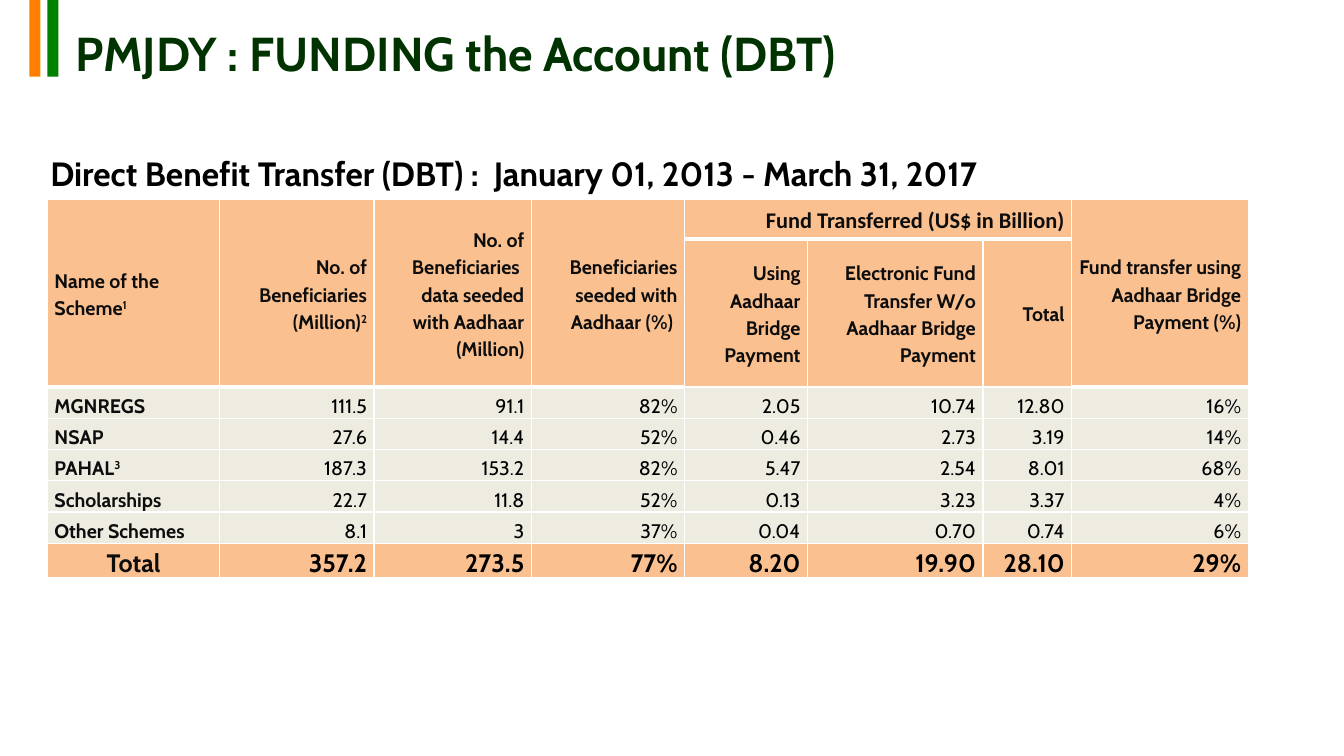
from lxml.etree import SubElement
from pptx import Presentation
from pptx.dml.color import RGBColor
from pptx.enum.shapes import MSO_SHAPE
from pptx.enum.text import MSO_ANCHOR, PP_ALIGN
from pptx.oxml.ns import qn
from pptx.util import Inches, Pt

FONT = "Cabin"
PEACH, CREAM, INK, BLACK = "FAC090", "EEECE1", "0D0D0D", "000000"
WIDTHS = [1.71, 1.53, 1.56, 1.52, 1.22, 1.74, 0.88, 1.75]
HEIGHTS = [0.39, 1.47] + [0.31] * 6

# "^" marks a raised digit, a line break starts a new paragraph
HEADS = {
    (0, 0): "Name of the Scheme^1",
    (0, 1): "No. of Beneficiaries\n(Million)^2",
    (0, 2): "No. of Beneficiaries  data seeded with Aadhaar\n(Million)",
    (0, 3): "Beneficiaries seeded with Aadhaar (%) ",
    (0, 4): "Fund Transferred (US$ in Billion)",
    (0, 7): "Fund transfer using Aadhaar Bridge Payment (%)",
    (1, 4): "Using Aadhaar Bridge Payment",
    (1, 5): "Electronic Fund Transfer W/o Aadhaar Bridge Payment",
    (1, 6): "Total",
}
SCHEMES = [
    ["MGNREGS", "111.5", "91.1", "82%", "2.05", "10.74", "12.80", "16%"],
    ["NSAP", "27.6", "14.4", "52%", "0.46", "2.73", "3.19", "14%"],
    ["PAHAL^3", "187.3", "153.2", "82%", "5.47", "2.54", "8.01", "68%"],
    ["Scholarships", "22.7", "11.8", "52%", "0.13", "3.23", "3.37", "4%"],
    ["Other Schemes", "8.1", "3", "37%", "0.04", "0.70", "0.74", "6%"],
]
TOTALS = ["Total", "357.2", "273.5", "77%", "8.20", "19.90", "28.10", "29%"]


def color(code):
    return RGBColor.from_string(code)


def write(frame, text, size, ink, bold=True, font=FONT,
          align=PP_ALIGN.LEFT, lead=1.15):
    for num, line in enumerate(text.split("\n")):
        para = frame.add_paragraph() if num else frame.paragraphs[0]
        para.alignment = align
        para.line_spacing = lead
        for part, words in enumerate(line.split("^")):
            run = para.add_run()
            run.text = words
            run.font.name = font
            run.font.size = Pt(size)
            run.font.bold = bold
            run.font.color.rgb = color(ink)
            if part:
                run.font._element.set("baseline", "30000")


def add_text(slide, box, text, size, ink, lead, anchor):
    frame = slide.shapes.add_textbox(*map(Inches, box)).text_frame
    frame.word_wrap = True
    frame.vertical_anchor = anchor
    write(frame, text, size, ink, lead=lead)


def add_title(slide, left, top, width, height):
    for num, code in enumerate(["FF8000", "008000"]):
        bar = slide.shapes.add_shape(
            MSO_SHAPE.RECTANGLE, Inches(left + 0.18 * num), Inches(top),
            Inches(0.11), Inches(height))
        bar.shadow.inherit = False
        bar.fill.solid()
        bar.fill.fore_color.rgb = color(code)
        bar.line.fill.background()
    add_text(slide, (left + 0.36, top + 0.28, width - 0.36, 0.55),
             "PMJDY : FUNDING the Account (DBT)", 34, "003300", 0.9,
             MSO_ANCHOR.MIDDLE)


def add_edges(cell, base):
    """Draw white lines round a cell, with its own weight below."""
    props = cell._tc.get_or_add_tcPr()
    for side, weight in zip("LRTB", (1, 1, 1, base)):
        line = SubElement(props, qn(f"a:ln{side}"), w=str(Pt(weight)))
        fill = SubElement(line, qn("a:solidFill"))
        SubElement(fill, qn("a:srgbClr"), val="FFFFFF")


def style(cell, fill, anchor):
    cell.margin_left = cell.margin_right = Inches(0.07)
    cell.margin_top = cell.margin_bottom = 0
    cell.vertical_anchor = anchor
    add_edges(cell, 3 if cell.is_merge_origin or cell.is_spanned else 1)
    cell.fill.solid()
    cell.fill.fore_color.rgb = color(fill)


def add_grid(slide, left, top):
    table = slide.shapes.add_table(
        len(HEIGHTS), len(WIDTHS), Inches(left), Inches(top),
        Inches(sum(WIDTHS)), Inches(sum(HEIGHTS))).table
    table.first_row = table.horz_banding = False
    for col, width in zip(table.columns, WIDTHS):
        col.width = Inches(width)
    for row, height in zip(table.rows, HEIGHTS):
        row.height = Inches(height)
    for col in (0, 1, 2, 3, 7):
        table.cell(0, col).merge(table.cell(1, col))
    table.cell(0, 4).merge(table.cell(0, 6))

    last = len(HEIGHTS) - 1
    for row in range(len(HEIGHTS)):
        body = 2 <= row < last
        for col in range(len(WIDTHS)):
            style(table.cell(row, col), CREAM if body else PEACH,
                  MSO_ANCHOR.BOTTOM if body else MSO_ANCHOR.MIDDLE)

    for (row, col), text in HEADS.items():
        group = (row, col) == (0, 4)
        write(table.cell(row, col).text_frame, text, 16 if group else 14, INK,
              font="Calibri" if group else FONT,
              align=PP_ALIGN.RIGHT if col else PP_ALIGN.LEFT)
    for row, values in enumerate(SCHEMES + [TOTALS], 2):
        total = row == last
        lead = PP_ALIGN.CENTER if total else PP_ALIGN.LEFT
        for col, text in enumerate(values):
            write(table.cell(row, col).text_frame, text, 18 if total else 14,
                  BLACK if col else INK, bold=total or col == 0,
                  align=PP_ALIGN.RIGHT if col else lead)


def main():
    deck = Presentation()
    deck.slide_width, deck.slide_height = Inches(13.33), Inches(7.5)
    slide = deck.slides.add_slide(deck.slide_layouts[6])
    add_title(slide, 0.29, 0, 13.04, 0.76)
    add_grid(slide, 0.47, 1.98)
    add_text(slide, (0.4, 1.41, 11.89, 0.57),
             "Direct Benefit Transfer (DBT) :  January 01, 2013 - March 31, 2017",
             24, BLACK, 1.15, MSO_ANCHOR.TOP)
    deck.save("out.pptx")


if __name__ == "__main__":
    main()
